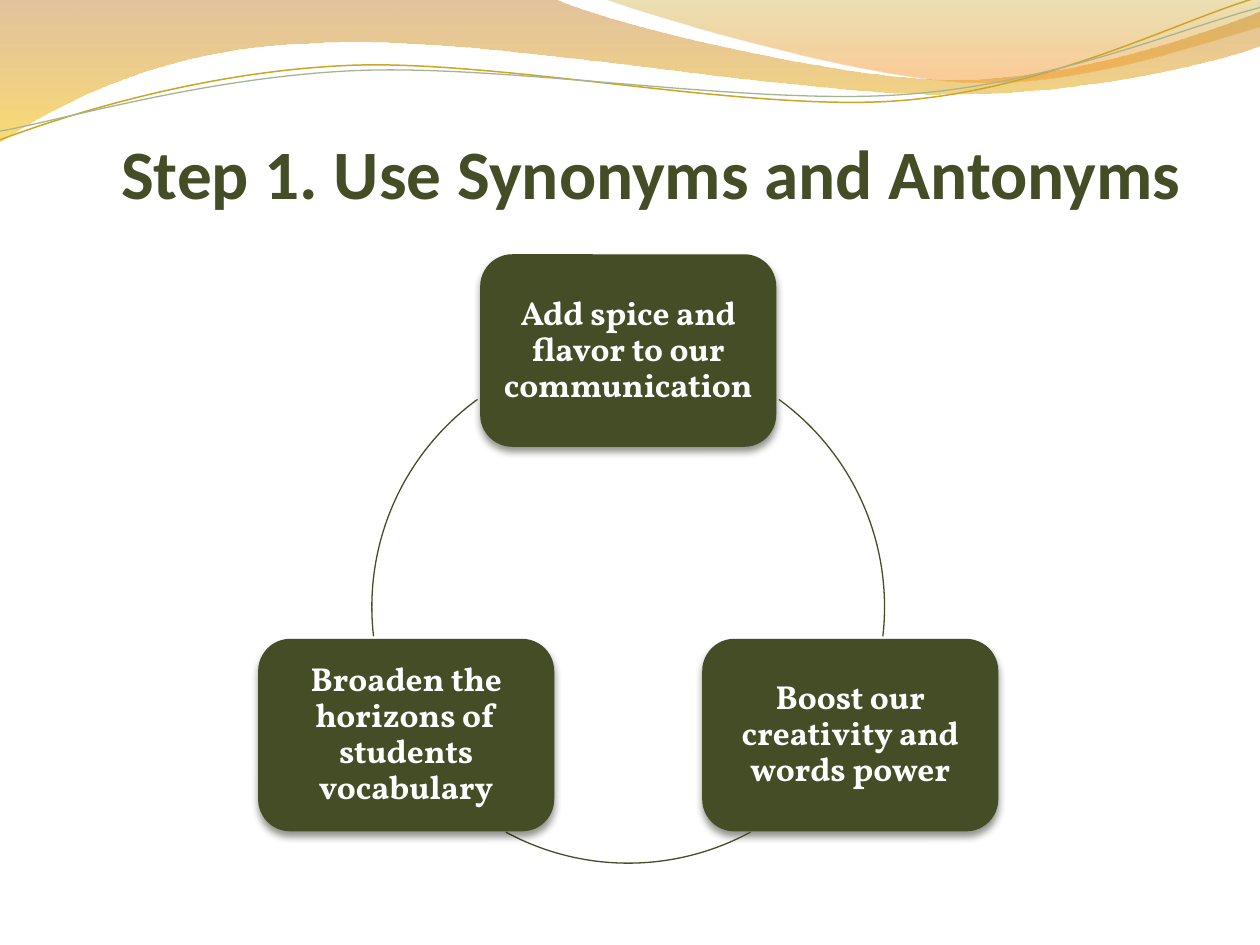
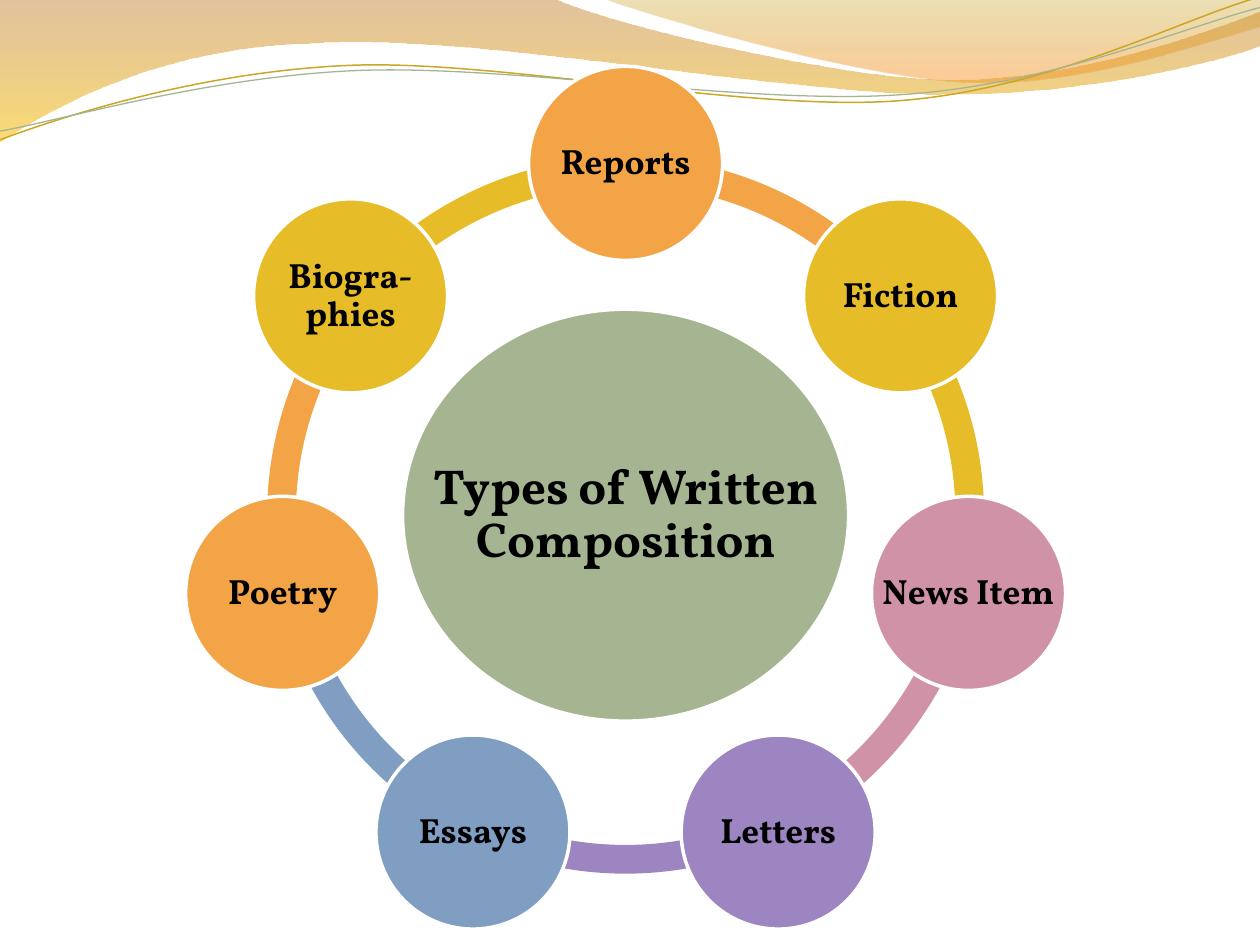
import math
from dataclasses import dataclass
from typing import Any, NamedTuple

import pptx
import pptx.dml.color
import pptx.enum.shapes
import pptx.enum.text
import pptx.oxml.ns
import pptx.util
from lxml import etree

Pt = pptx.util.Pt
qn = pptx.oxml.ns.qn
PRESET = pptx.enum.shapes.MSO_SHAPE
ANCHOR = pptx.enum.text.MSO_ANCHOR


# ---- Theme ----
@dataclass(frozen=True)
class Theme:
    olive: str = "444D26"
    olive_shadow: str = "181B0D"
    white: str = "FFFFFF"
    black: str = "000000"
    sage: str = "A5B592"
    orange: str = "F3A447"
    gold: str = "E7BC29"
    rose: str = "D092A7"
    purple: str = "9C85C0"
    blue: str = "809EC2"
    dark_gold: str = "CCA624"
    title_font: str = "Calibri"
    body_font: str = "Vollkorn"
    title_size: float = 39.6
    hub_size: float = 28
    node_size: float = 20
    benefit_size: float = 19


THEME = Theme()
# Preset angles are stored in 60000ths of a degree, adjustments in 100000ths
ANGLE_UNIT = 0.6


class Point(NamedTuple):
    x: float
    y: float


class Frame(NamedTuple):
    left: float
    top: float
    width: float
    height: float

    def lengths(self) -> list[int]:
        return [Pt(value) for value in self]


class TextStyle(NamedTuple):
    size: float
    color: str
    font: str = THEME.body_font


class GradientStop(NamedTuple):
    position: float
    color: str
    opacity: int


@dataclass(frozen=True)
class Wave:
    """A start point, then lines (one point) and Bezier curves (three points)."""
    start: tuple
    segments: tuple
    stops: tuple = ()
    line_color: str = ""
    line_width: float = 0


class Benefit(NamedTuple):
    text: str
    arc_start: float
    arc_end: float


class Genre(NamedTuple):
    text: str
    color: str


# ---- Content ----
WAVES = (
    Wave((0, 0), (
        ((316.8, -0.7),),
        ((342.7, 12.2), (478.1, 45.4), (545.8, 45.4)),
        ((614.2, 45.4), (689.8, 18.7), (720, 6.5)),
        ((720.7, 25.9),),
        ((707.8, 31.7), (626.4, 54.7), (537.1, 54)),
        ((447.8, 54), (275, 20.2), (185, 24.5)),
        ((92.9, 25.9), (33.1, 59.8), (-0.7, 81.4)),
    ), stops=(GradientStop(0, "C07A28", 45), GradientStop(1, "F7BF00", 55))),
    Wave((344.9, -0.7), (
        ((366.5, 7.9), (491, 44.6), (553.7, 46.8)),
        ((616.3, 49.7), (691.9, 23), (720, 15.1)),
        ((720, 0),),
    ), stops=(GradientStop(0, "C09709", 30), GradientStop(0.8, "F59320", 45))),
    Wave((0, 79.9), (
        ((34.6, 67), (113.8, 41), (199.4, 37.4)),
        ((284.4, 33.8), (427, 64.1), (513.4, 57.6)),
        ((599.8, 51.1), (675.4, 10.8), (718.6, -1.4)),
    ), line_color=THEME.dark_gold, line_width=0.85),
    Wave((0, 74.9), (
        ((33.8, 69.1), (118.1, 43.9), (203.8, 40.3)),
        ((290.2, 36.7), (429.8, 60.5), (516.2, 54)),
        ((601.9, 48.2), (677.5, 15.1), (720, 4.3)),
    ), line_color=THEME.sage, line_width=0.75),
)

BENEFITS = (
    Benefit("Add spice and flavor to our communication", 306, 6.6),
    Benefit("Boost our creativity and words power", 61.5, 118.5),
    Benefit("Broaden the horizons of students vocabulary", 173.4, 234),
)

GENRES = (
    Genre("Reports", THEME.orange),
    Genre("Fiction", THEME.gold),
    Genre("News Item", THEME.rose),
    Genre("Letters", THEME.purple),
    Genre("Essays", THEME.blue),
    Genre("Poetry", THEME.orange),
    Genre("Biogra-phies", THEME.gold),
)


# ---- Geometry ----
def centered(center: Point, width: float, height: float) -> Frame:
    return Frame(center.x - width / 2, center.y - height / 2, width, height)


def clock_angle(index: int, count: int) -> float:
    """Degrees clockwise from the right, with the first item at the top."""
    return (270 + 360 * index / count) % 360


def on_circle(center: Point, radius: float, degrees: float) -> Point:
    angle = math.radians(degrees)
    return Point(center.x + radius * math.cos(angle),
                 center.y + radius * math.sin(angle))


# ---- Drawing ----
def rgb(color: str) -> pptx.dml.color.RGBColor:
    return pptx.dml.color.RGBColor.from_string(color)


def set_opacity(color_element: Any, percent: int) -> None:
    etree.SubElement(color_element, qn("a:alpha"), val=str(percent * 1000))


def style_shape(shape: Any, fill: str = "", line: str = "", width: float = 0) -> None:
    shape.shadow.inherit = False
    if fill:
        shape.fill.solid()
        shape.fill.fore_color.rgb = rgb(fill)
    else:
        shape.fill.background()
    if line:
        shape.line.color.rgb = rgb(line)
        shape.line.width = Pt(width)
    else:
        shape.line.fill.background()


def add_preset(shapes: Any, preset: Any, frame: Frame, fill: str = "",
               line: str = "", width: float = 0) -> Any:
    shape = shapes.add_shape(preset, *frame.lengths())
    style_shape(shape, fill, line, width)
    return shape


def write_text(shape: Any, text: str, style: TextStyle, insets: tuple,
               anchor: Any = ANCHOR.MIDDLE) -> None:
    frame = shape.text_frame
    frame.word_wrap = True
    frame.vertical_anchor = anchor
    (frame.margin_left, frame.margin_top,
     frame.margin_right, frame.margin_bottom) = map(Pt, insets)
    paragraph = frame.paragraphs[0]
    paragraph.alignment = pptx.enum.text.PP_ALIGN.CENTER
    paragraph.line_spacing = 0.9
    run = paragraph.add_run()
    run.text = text
    run.font.name = style.font
    run.font.size = Pt(style.size)
    run.font.bold = True
    run.font.color.rgb = rgb(style.color)


def bend_segments(shape: Any, segments: tuple) -> None:
    """Merge the three corners of each curved segment into one Bezier curve."""
    corners = iter(list(shape.element.spPr.iter(qn("a:lnTo"))))
    for segment in segments:
        steps = [next(corners) for _ in segment]
        if len(steps) == 1:
            continue
        curve = etree.Element(qn("a:cubicBezTo"))
        steps[0].addprevious(curve)
        for step in steps:
            curve.append(step[0])
            step.getparent().remove(step)


def add_wave(slide: Any, wave: Wave) -> None:
    builder = slide.shapes.build_freeform(*map(Pt, wave.start), scale=1.0)
    corners = [(Pt(x), Pt(y)) for segment in wave.segments for x, y in segment]
    builder.add_line_segments(corners, close=bool(wave.stops))
    shape = builder.convert_to_shape()
    bend_segments(shape, wave.segments)
    style_shape(shape, line=wave.line_color, width=wave.line_width)
    if wave.stops:
        shape.fill.gradient()
        shape.fill.gradient_angle = 270
        for gradient_stop, stop in zip(shape.fill.gradient_stops, wave.stops):
            gradient_stop.position = stop.position
            gradient_stop.color.rgb = rgb(stop.color)
        colors = shape.element.spPr.find(qn("a:gradFill")).iter(qn("a:srgbClr"))
        for color, stop in zip(colors, wave.stops):
            set_opacity(color, stop.opacity)


def add_wave_slide(deck: Any) -> Any:
    slide = deck.slides.add_slide(deck.slide_layouts[6])
    for wave in WAVES:
        add_wave(slide, wave)
    return slide


def add_title(slide: Any, text: str) -> None:
    title = slide.shapes.add_textbox(*Frame(48.2, 60.2, 648, 62.4).lengths())
    write_text(title, text, TextStyle(THEME.title_size, THEME.olive, THEME.title_font),
               (0, 3.6, 0, 0), ANCHOR.BOTTOM)


def add_drop_shadow(shape: Any) -> None:
    effects = shape.element.spPr.find(qn("a:effectLst"))
    shadow = etree.SubElement(effects, qn("a:outerShdw"), blurRad=str(Pt(4.5)),
                              dist=str(Pt(3)), dir="5400000", rotWithShape="0")
    color = etree.SubElement(shadow, qn("a:srgbClr"), val=THEME.olive_shadow)
    set_opacity(color, 48)


def add_disc(slide: Any, text: str, frame: Frame, fill: str, size: float,
             inset: float) -> None:
    """A circle grouped with a label that may use its full width."""
    group = slide.shapes.add_group_shape()
    add_preset(group.shapes, PRESET.OVAL, frame, fill, THEME.white, 2)
    label = group.shapes.add_textbox(*frame.lengths())
    write_text(label, text, TextStyle(size, THEME.black), (inset,) * 4)


# ---- Slides ----
def build_synonyms_slide(deck: Any) -> None:
    slide = add_wave_slide(deck)
    add_title(slide, "Step 1. Use Synonyms and Antonyms")
    center, radius = Point(359, 346.8), 146.5
    ring = centered(center, 2 * radius, 2 * radius)
    for index, benefit in enumerate(BENEFITS):
        middle = on_circle(center, radius, clock_angle(index, len(BENEFITS)))
        box = add_preset(slide.shapes, PRESET.ROUNDED_RECTANGLE,
                         centered(middle, 169.2, 110), THEME.olive)
        add_drop_shadow(box)
        write_text(box, benefit.text, TextStyle(THEME.benefit_size, THEME.white), (3,) * 4)
        arc = add_preset(slide.shapes, PRESET.ARC, ring, line=THEME.olive, width=0.75)
        arc.adjustments[0] = benefit.arc_start * ANGLE_UNIT
        arc.adjustments[1] = benefit.arc_end * ANGLE_UNIT


def build_composition_slide(deck: Any) -> None:
    slide = add_wave_slide(deck)
    center, radius = Point(357.5, 294.4), 201
    ring = centered(center, 409.7, 409.7)
    count = len(GENRES)
    for index, genre in reversed(list(enumerate(GENRES))):
        arc = add_preset(slide.shapes, PRESET.BLOCK_ARC, ring, genre.color)
        arc.adjustments[0] = clock_angle(index, count) * ANGLE_UNIT
        arc.adjustments[1] = clock_angle(index + 1, count) * ANGLE_UNIT
        arc.adjustments[2] = 0.04
    add_disc(slide, "Types of Written Composition", centered(center, 254.9, 235.4),
             THEME.sage, THEME.hub_size, 2.9)
    for index, genre in enumerate(GENRES):
        middle = on_circle(center, radius, clock_angle(index, count))
        add_disc(slide, genre.text, centered(middle, 110.9, 110.9),
                 genre.color, THEME.node_size, 2)


def main() -> None:
    deck = pptx.Presentation()
    deck.slide_width, deck.slide_height = Pt(720), Pt(540)
    build_synonyms_slide(deck)
    build_composition_slide(deck)
    deck.save("out.pptx")


if __name__ == "__main__":
    main()
